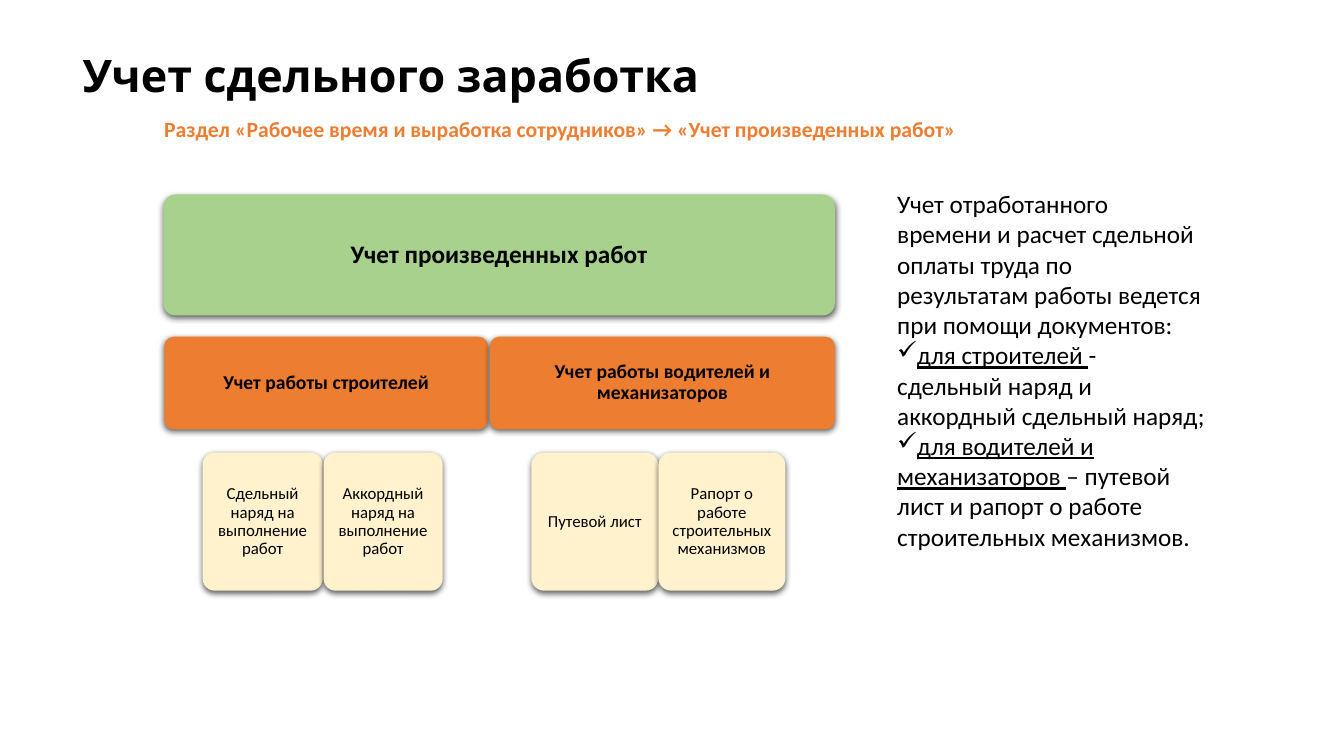
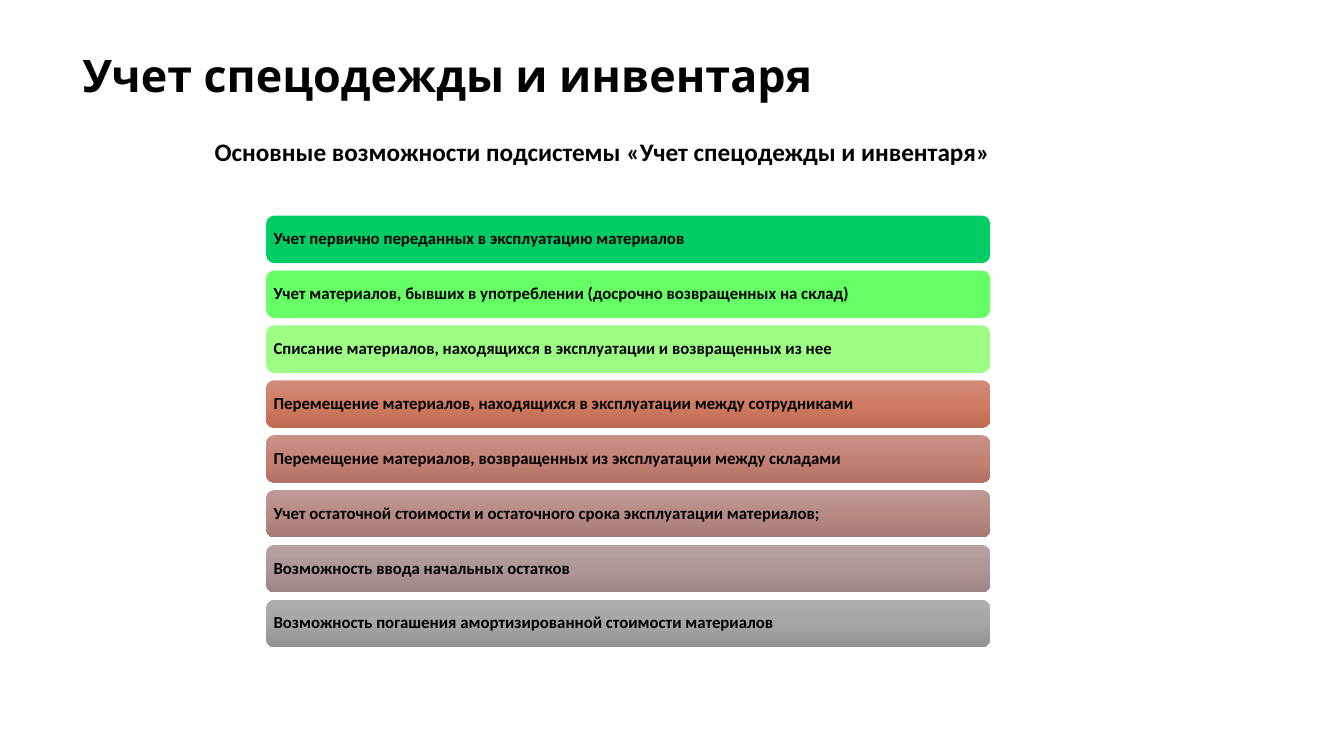
from copy import deepcopy

from pptx import Presentation
from pptx.dml.color import RGBColor
from pptx.enum.shapes import MSO_SHAPE
from pptx.enum.text import MSO_ANCHOR, PP_ALIGN
from pptx.oxml import parse_xml
from pptx.oxml.ns import nsdecls, qn
from pptx.util import Inches, Pt

BLACK, GREEN, ORANGE, CREAM = "000000", "A9D18E", "ED7D31", "FFF2CC"

SHADOW = (
    f'<a:outerShdw {nsdecls("a")} blurRad="57150" dist="19050" dir="5400000" '
    'algn="ctr" rotWithShape="0"><a:srgbClr val="000000">'
    '<a:alpha val="63000"/></a:srgbClr></a:outerShdw>'
)


def write(shape, text, size, bold=True, color=BLACK, font="Calibri", inset=None):
    """Fill a shape with text, one paragraph a line, and format it."""
    frame = shape.text_frame
    frame.word_wrap = True
    frame.text = text
    if inset is not None:
        frame.margin_left = frame.margin_right = Inches(inset)
        frame.margin_top = frame.margin_bottom = Inches(inset)
    for para in frame.paragraphs:
        for run in para.runs:
            run.font.name = font
            run.font.size = Pt(size)
            run.font.bold = bold
            run.font.color.rgb = RGBColor.from_string(color)
    return frame


def block(slide, at, text, size, bold, fills, inset, align):
    """Add a rounded block; several fills make a gradient from top to bottom."""
    shape = slide.shapes.add_shape(MSO_SHAPE.ROUNDED_RECTANGLE, *map(Inches, at))
    shape.shadow.inherit = False
    shape.line.fill.background()
    if len(fills) == 1:
        shape.fill.solid()
        shape.fill.fore_color.rgb = RGBColor.from_string(fills[0])
    else:
        shape.fill.gradient()
        shape.fill.gradient_angle = 270
        stops = shape._element.spPr.find(".//" + qn("a:gsLst"))
        stops.insert(1, deepcopy(stops[0]))
        for i, stop in enumerate(shape.fill.gradient_stops):
            stop.position = i / 2
            stop.color.rgb = RGBColor.from_string(fills[i])
    frame = write(shape, text, size, bold, inset=inset)
    frame.vertical_anchor = MSO_ANCHOR.MIDDLE
    frame.paragraphs[0].alignment = align
    frame.paragraphs[0].line_spacing = 0.9
    return shape


prs = Presentation()
prs.slide_width, prs.slide_height = Inches(13.33), Inches(7.5)

# Slides with their titles
slides = []
for title in ("Учет сдельного заработка", "Учет спецодежды и инвентаря"):
    slide = prs.slides.add_slide(prs.slide_layouts[6])
    box = slide.shapes.add_textbox(*map(Inches, (0.72, 0.46, 11.5, 0.63)))
    frame = write(box, title, 32, font="Karla")
    frame.vertical_anchor = MSO_ANCHOR.MIDDLE
    frame.paragraphs[0].line_spacing = 0.9
    slides.append(slide)
wages, gear = slides

# Piecework: section path and hierarchy
box = wages.shapes.add_textbox(*map(Inches, (1.53, 1.1, 9.31, 0.37)))
write(box, "Раздел «Рабочее время и выработка сотрудников» → "
      "«Учет произведенных работ»", 15.5, color=ORANGE)

# Level: top, height, size, bold, fill, inset, then left, width, text of each block
levels = [
    (1.93, 1.2, 18, True, GREEN, 0.07, [
        (1.62, 6.66, "Учет произведенных работ")]),
    (3.34, 0.92, 14, True, ORANGE, 0.06, [
        (1.63, 3.21, "Учет работы строителей"),
        (4.86, 3.42, "Учет работы водителей и механизаторов")]),
    (4.49, 1.37, 12, False, CREAM, 0.05, [
        (2.01, 1.19, "Сдельный наряд на выполнение работ"),
        (3.21, 1.18, "Аккордный наряд на выполнение работ"),
        (5.27, 1.26, "Путевой лист"),
        (6.53, 1.26, "Рапорт о работе строительных механизмов")]),
]
for top, height, size, bold, fill, inset, nodes in levels:
    for left, width, text in nodes:
        node = block(wages, (left, top, width, height), text, size, bold,
                     [fill], inset, PP_ALIGN.CENTER)
        node.adjustments[0] = 0.1
        node._element.spPr.find(qn("a:effectLst")).append(parse_xml(SHADOW))

# Piecework: explanation with check marks
box = wages.shapes.add_textbox(*map(Inches, (8.8, 1.82, 3.25, 4.04)))
frame = write(box, "Учет отработанного времени и расчет сдельной оплаты труда "
              "по результатам работы ведется при помощи документов:", 18, False)
checks = [
    ("для строителей ", "- сдельный наряд и аккордный сдельный наряд;"),
    ("для водителей и механизаторов ",
     "– путевой лист и рапорт о работе строительных механизмов."),
]
for who, papers in checks:
    para = frame.add_paragraph()
    props = para._p.get_or_add_pPr()
    props.set("marL", "0")
    props.set("indent", "0")
    props.append(parse_xml(f'<a:buChar {nsdecls("a")} char="✓"/>'))
    for text, under in ((who, True), (papers, False)):
        run = para.add_run()
        run.text = text
        run.font.name = "Calibri"
        run.font.size = Pt(18)
        run.font.underline = under
        run.font.color.rgb = RGBColor.from_string(BLACK)

# Workwear: heading and list of features
box = gear.shapes.add_textbox(*map(Inches, (2.03, 1.3, 7.95, 0.4)))
write(box, "Основные возможности подсистемы «Учет спецодежды и инвентаря»", 18)

bars = [
    ("Учет первично переданных в эксплуатацию материалов", ["00CC66"]),
    ("Учет материалов, бывших в употреблении (досрочно возвращенных на склад)",
     ["66FF66"]),
    ("Списание материалов, находящихся в эксплуатации и возвращенных из нее",
     ["9DFE86"]),
    ("Перемещение материалов, находящихся в эксплуатации между сотрудниками",
     ["D08D7B", "CF7B62", "BD6B52"]),
    ("Перемещение материалов, возвращенных из эксплуатации между складами",
     ["C79288", "C38274", "B17163"]),
    ("Учет остаточной стоимости и остаточного срока эксплуатации материалов;",
     ["BE9A95", "B88B85", "A67A74"]),
    ("Возможность ввода начальных остатков", ["B6A4A2", "AE9796", "9C8584"]),
    ("Возможность погашения амортизированной стоимости материалов",
     ["AFAFAF", "A5A5A5", "939393"]),
]
first, last = 2.14, 5.95
step = (last - first) / (len(bars) - 1)
for i, (text, fills) in enumerate(bars):
    block(gear, (2.64, first + i * step, 7.18, 0.47), text, 12, True,
          fills, 0.05, PP_ALIGN.LEFT)

prs.save("out.pptx")
